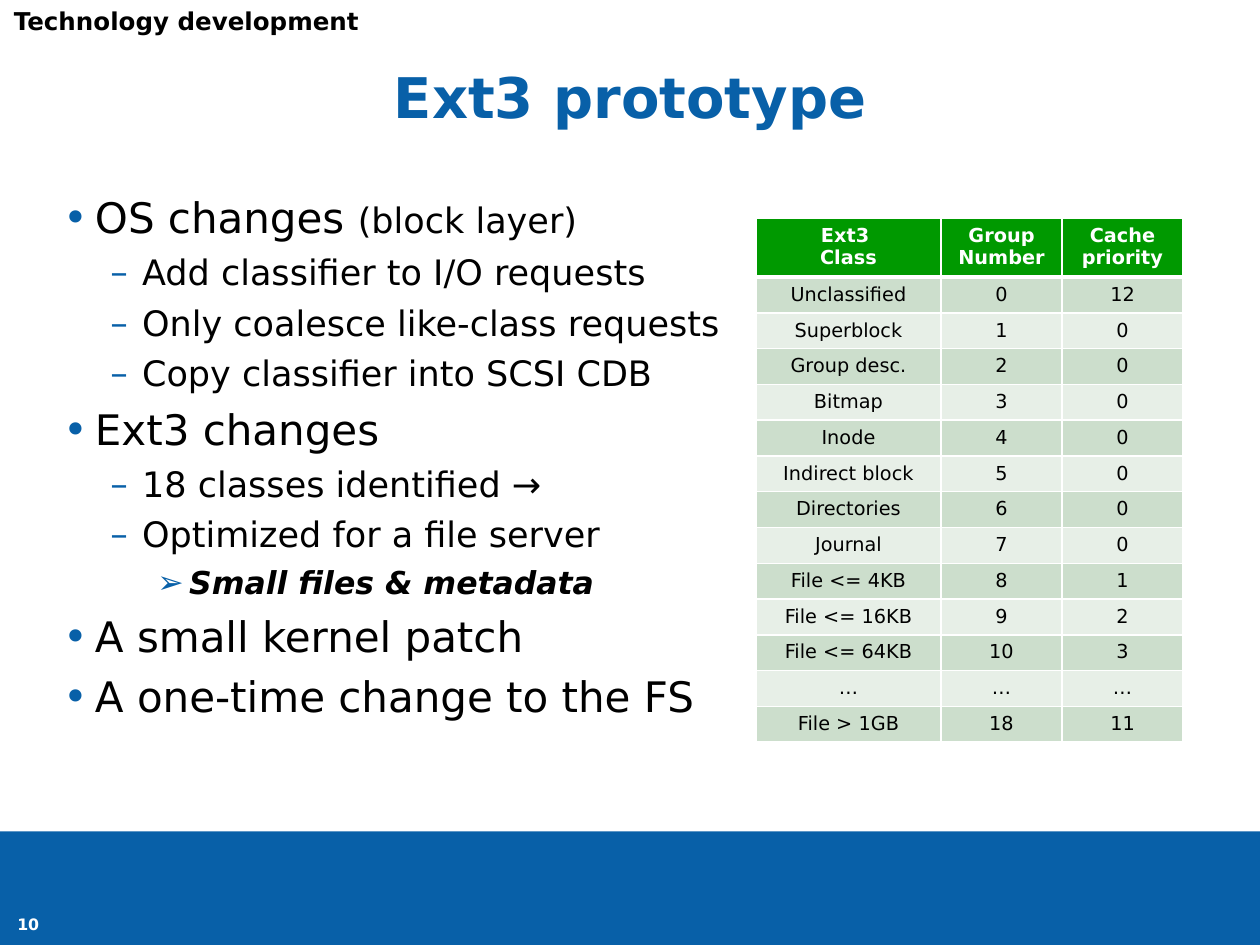
"""Build the Ext3 prototype slide with its list and class table."""
from dataclasses import dataclass

from lxml.etree import SubElement
from pptx import Presentation
from pptx.dml.color import RGBColor
from pptx.enum.shapes import MSO_SHAPE
from pptx.enum.text import MSO_ANCHOR, MSO_AUTO_SIZE, PP_ALIGN
from pptx.oxml.ns import qn
from pptx.util import Cm, Pt

FONT = "DejaVu Sans"
COLORS = {
    "blue": "0860A8", "white": "FFFFFF", "black": "000000",
    "header": "009900", "odd": "CCDECC", "even": "E7EFE7",
}


@dataclass(frozen=True)
class Level:
    bullet: str
    margin: float
    size: int
    strong: bool = False


@dataclass(frozen=True)
class Item:
    level: int
    text: str
    note: str = ""


LEVELS = [Level("•", 0.64, 24), Level("–", 1.59, 20), Level("➢", 2.54, 18, True)]
ITEMS = [
    Item(0, "OS changes ", "(block layer)"),
    Item(1, "Add classifier to I/O requests"),
    Item(1, "Only coalesce like-class requests"),
    Item(1, "Copy classifier into SCSI CDB"),
    Item(0, "Ext3 changes"),
    Item(1, "18 classes identified →"),
    Item(1, "Optimized for a file server"),
    Item(2, "Small files & metadata"),
    Item(0, "A small kernel patch"),
    Item(0, "A one-time change to the FS"),
]
ROWS = [
    ("Ext3 \nClass", "Group Number", "Cache priority"),
    ("Unclassified", "0", "12"),
    ("Superblock", "1", "0"),
    ("Group desc.", "2", "0"),
    ("Bitmap", "3", "0"),
    ("Inode", "4", "0"),
    ("Indirect block", "5", "0"),
    ("Directories", "6", "0"),
    ("Journal", "7", "0"),
    ("File <= 4KB", "8", "1"),
    ("File <= 16KB", "9", "2"),
    ("File <= 64KB", "10", "3"),
    ("…", "…", "…"),
    ("File > 1GB", "18", "11"),
]
COL_WIDTHS = (3.73, 2.44, 2.44)
HEADER_HEIGHT, ROW_HEIGHT = 1.13, 0.71


def rgb(name: str) -> RGBColor:
    return RGBColor.from_string(COLORS[name])


def place(sp, left: float, top: float, width: float, height: float) -> None:
    sp.left, sp.top, sp.width, sp.height = map(Cm, (left, top, width, height))


def add_run(p, text: str, size: int, color: str, bold=False, italic=False) -> None:
    r = p.add_run()
    r.text = text
    r.font.name, r.font.size = FONT, Pt(size)
    r.font.bold, r.font.italic = bold, italic
    r.font.color.rgb = rgb(color)


def add_item(p, item: Item, first: bool) -> None:
    lv = LEVELS[item.level]
    p.level = item.level
    p.line_spacing = 0.95
    pPr = p._p.get_or_add_pPr()
    pPr.set("marL", str(Cm(lv.margin)))
    pPr.set("indent", str(Cm(-0.64)))
    before = SubElement(pPr, qn("a:spcBef"))
    SubElement(before, qn("a:spcPct"), val="0" if first else "30000")
    SubElement(SubElement(pPr, qn("a:buClr")), qn("a:srgbClr"), val=COLORS["blue"])
    SubElement(pPr, qn("a:buFont"), typeface=FONT)
    SubElement(pPr, qn("a:buChar"), char=lv.bullet)
    add_run(p, item.text, lv.size, "black", lv.strong, lv.strong)
    if item.note:
        add_run(p, item.note, 20, "black")


def set_borders(cell, top: int, bottom: int) -> None:
    tcPr = cell._tc.get_or_add_tcPr()
    for side, width in (("L", 1), ("R", 1), ("T", top), ("B", bottom)):
        ln = SubElement(tcPr, qn(f"a:ln{side}"), w=str(Pt(width)))
        fill = SubElement(ln, qn("a:solidFill"))
        SubElement(fill, qn("a:srgbClr"), val=COLORS["white"])


def add_class_table(s) -> None:
    height = HEADER_HEIGHT + ROW_HEIGHT * (len(ROWS) - 1)
    table = s.shapes.add_table(
        len(ROWS), len(COL_WIDTHS), Cm(15.24), Cm(4.4), Cm(sum(COL_WIDTHS)), Cm(height)
    ).table
    for col, width in zip(table.columns, COL_WIDTHS):
        col.width = Cm(width)
    for i, values in enumerate(ROWS):
        header = i == 0
        fill = "header" if header else ("odd" if i % 2 else "even")
        table.rows[i].height = Cm(HEADER_HEIGHT if header else ROW_HEIGHT)
        for j, value in enumerate(values):
            cell = table.cell(i, j)
            set_borders(cell, 3 if i == 1 else 1, 3 if header else 1)
            cell.fill.solid()
            cell.fill.fore_color.rgb = rgb(fill)
            tf = cell.text_frame
            for k, line in enumerate(value.split("\n")):
                p = tf.add_paragraph() if k else tf.paragraphs[0]
                p.alignment = PP_ALIGN.CENTER
                add_run(p, line, 11, "white" if header else "black", header)


def add_label(s, text: str, box: tuple, size: int, color: str):
    sp = s.shapes.add_textbox(*map(Cm, box))
    p = sp.text_frame.paragraphs[0]
    p.alignment = PP_ALIGN.CENTER
    add_run(p, text, size, color, True)
    return sp.text_frame


def main() -> None:
    prs = Presentation()
    prs.slide_width, prs.slide_height = Cm(25.4), Cm(19.05)
    s = prs.slides.add_slide(prs.slide_layouts[1])

    band = s.shapes.add_shape(MSO_SHAPE.RECTANGLE, 0, Cm(16.76), Cm(25.4), Cm(2.29))
    band.shadow.inherit = False
    band.fill.solid()
    band.fill.fore_color.rgb = rgb("blue")
    band.line.fill.background()

    tf = add_label(s, "10", (0, 18.21, 1.14, 0.84), 9, "white")
    tf.margin_left = tf.margin_right = tf.margin_top = tf.margin_bottom = 0
    tf.vertical_anchor = MSO_ANCHOR.MIDDLE
    tf.word_wrap = True

    title = s.shapes.title
    place(title, 1.02, 0.43, 23.37, 3.18)
    tf = title.text_frame
    tf.auto_size = MSO_AUTO_SIZE.NONE
    tf.vertical_anchor = MSO_ANCHOR.MIDDLE
    p = tf.paragraphs[0]
    p.alignment = PP_ALIGN.CENTER
    p.line_spacing = 0.9
    add_run(p, "Ext3 prototype", 32, "blue", True)

    body = s.placeholders[1]
    place(body, 1.02, 3.81, 23.34, 12.83)
    tf = body.text_frame
    tf.auto_size = MSO_AUTO_SIZE.NONE
    for i, item in enumerate(ITEMS):
        add_item(tf.add_paragraph() if i else tf.paragraphs[0], item, i == 0)

    add_class_table(s)
    tf = add_label(s, "Technology development", (0, 0, 7.52, 0.86), 14, "black")
    tf.word_wrap = False
    tf.auto_size = MSO_AUTO_SIZE.SHAPE_TO_FIT_TEXT
    prs.save("out.pptx")


if __name__ == "__main__":
    main()
